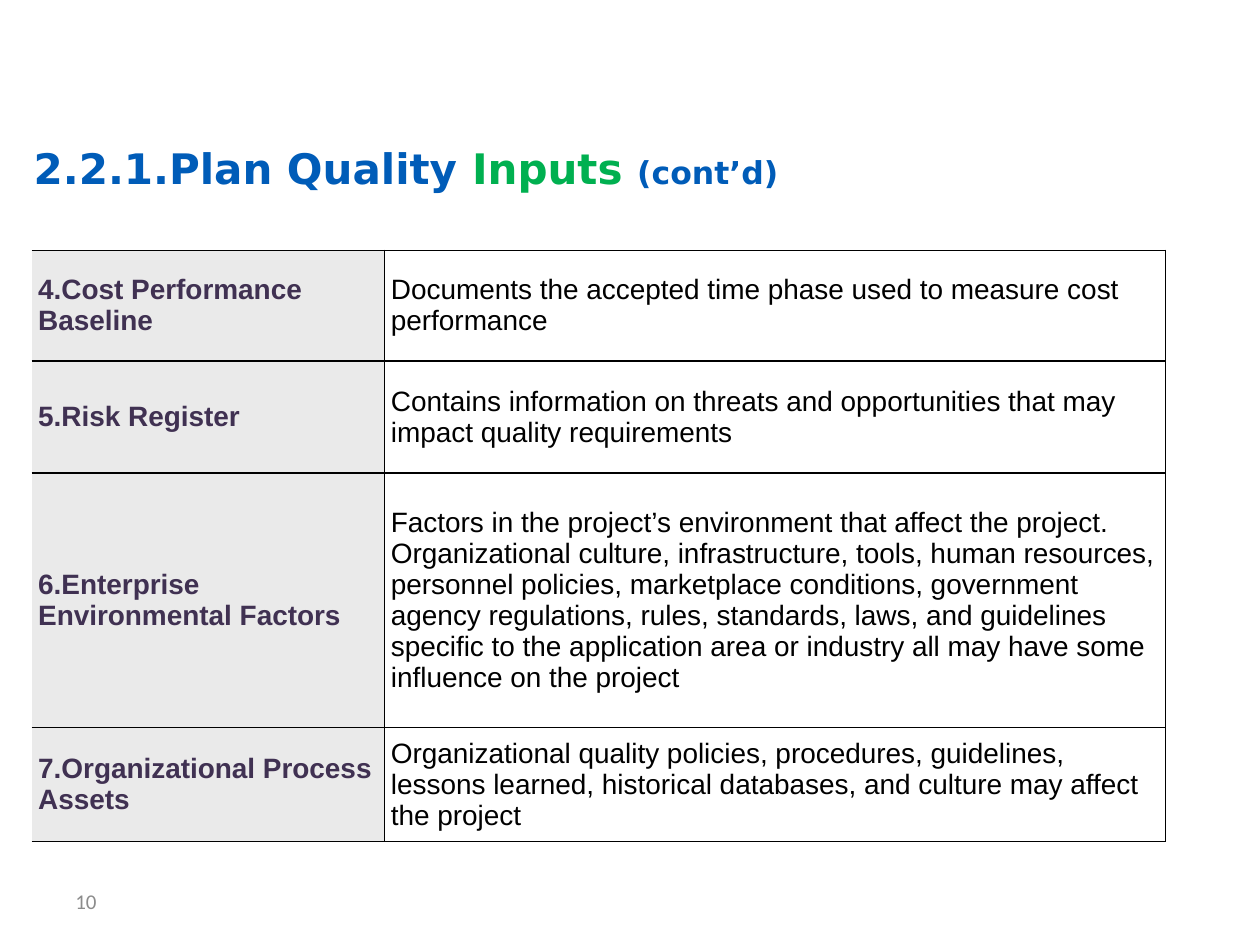
"""Build the slide on plan quality inputs with its table of inputs four to seven."""
import pptx
import pptx.dml.color
import pptx.enum.text
import pptx.oxml.ns
import pptx.util
from lxml import etree

Cm, Pt = pptx.util.Cm, pptx.util.Pt
RGBColor = pptx.dml.color.RGBColor
MIDDLE = pptx.enum.text.MSO_ANCHOR.MIDDLE

BLACK = RGBColor(0x00, 0x00, 0x00)
BLUE = RGBColor(0x00, 0x5C, 0xB8)
GREEN = RGBColor(0x00, 0xB0, 0x50)
PURPLE = RGBColor(0x40, 0x31, 0x52)
GREY = RGBColor(0x8C, 0x8C, 0x8C)
LIGHT = RGBColor(0xEA, 0xEA, 0xEA)

TITLE = {"name": "DejaVu Sans", "size": Pt(24), "bold": True, "color": BLUE}
NUMBER = {"name": "Calibri", "size": Pt(12), "color": GREY}
BODY = {"name": "Arial", "size": Pt(16), "bold": False, "color": BLACK}
HEAD = {**BODY, "bold": True, "color": PURPLE}
CELL = {"vertical_anchor": MIDDLE, "margin_left": Cm(0.13), "margin_right": Cm(0.13),
        "margin_top": Cm(0.13), "margin_bottom": Cm(0.13)}

COLUMNS = (7.11, 15.75)
INPUTS = [
    (2.24, "4.Cost Performance Baseline",
     "Documents the accepted time phase used to measure cost performance"),
    (2.26, "5.Risk Register",
     "Contains information on threats and opportunities that may impact quality requirements"),
    (5.13, "6.Enterprise Environmental Factors",
     "Factors in the project’s environment that affect the project.  Organizational culture, "
     "infrastructure, tools, human resources, personnel policies, marketplace conditions, "
     "government agency regulations, rules, standards, laws, and guidelines specific to the "
     "application area or industry all may have some influence on the project"),
    (2.28, "7.Organizational Process Assets",
     "Organizational quality policies, procedures, guidelines, lessons learned, historical "
     "databases, and culture may affect the project"),
]


def add_run(p, text, fmt):
    """Append a run and apply its font values."""
    r = p.add_run()
    r.text = text
    for key, value in fmt.items():
        if key == "color":
            r.font.color.rgb = value
        else:
            setattr(r.font, key, value)


def add_text(s, box, runs, anchor=pptx.enum.text.MSO_ANCHOR.TOP):
    """Add a one-paragraph text box."""
    tf = s.shapes.add_textbox(*map(Cm, box)).text_frame
    for key, value in {"word_wrap": True, "vertical_anchor": anchor}.items():
        setattr(tf, key, value)
    for text, fmt in runs:
        add_run(tf.paragraphs[0], text, fmt)


def set_borders(cell, widths):
    """Draw the cell's edges in black, leaving out those of zero width."""
    qn = pptx.oxml.ns.qn
    props = cell._tc.get_or_add_tcPr()
    for i, (side, width) in enumerate(widths.items()):
        ln = etree.Element(qn(f"a:ln{side}"), w=str(Pt(width)))
        props.insert(i, ln)
        if width:
            fill = etree.SubElement(ln, qn("a:solidFill"))
            etree.SubElement(fill, qn("a:srgbClr"), val=str(BLACK))
        else:
            etree.SubElement(ln, qn("a:noFill"))


def fill_cell(cell, text, is_head, is_top):
    """Write and format one table cell."""
    for key, value in CELL.items():
        setattr(cell, key, value)
    add_run(cell.text_frame.paragraphs[0], text, HEAD if is_head else BODY)
    if is_head:
        cell.fill.solid()
        cell.fill.fore_color.rgb = LIGHT
    else:
        cell.fill.background()
    set_borders(cell, {"L": 0 if is_head else 1, "R": 1 if is_head else 0.5,
                       "T": 0.5 if is_top else 1, "B": 1})


def add_inputs_table(s, left, top):
    """Add the table of inputs and their descriptions."""
    height = sum(row[0] for row in INPUTS)
    table = s.shapes.add_table(len(INPUTS), len(COLUMNS), Cm(left), Cm(top),
                               Cm(sum(COLUMNS)), Cm(height)).table
    for key in ("first_row", "horz_banding"):
        setattr(table, key, False)
    for column, width in zip(table.columns, COLUMNS):
        column.width = Cm(width)
    for i, (row_height, *texts) in enumerate(INPUTS):
        table.rows[i].height = Cm(row_height)
        for j, text in enumerate(texts):
            fill_cell(table.cell(i, j), text, j == 0, i == 0)


def main():
    """Build and save the presentation."""
    prs = pptx.Presentation()
    prs.slide_width, prs.slide_height = Cm(25.4), Cm(19.05)
    s = prs.slides.add_slide(prs.slide_layouts[6])
    add_text(s, (1.27, 17.65, 5.92, 1.02), [("10", NUMBER)], MIDDLE)
    add_inputs_table(s, 0.64, 5.04)
    add_text(s, (0.43, 2.74, 24.13, 1.27), [
        ("2.2.1.Plan Quality ", TITLE),
        ("Inputs ", {**TITLE, "color": GREEN}),
        ("(cont’d)", {**TITLE, "size": Pt(18)}),
    ])
    prs.save("out.pptx")


if __name__ == "__main__":
    main()
